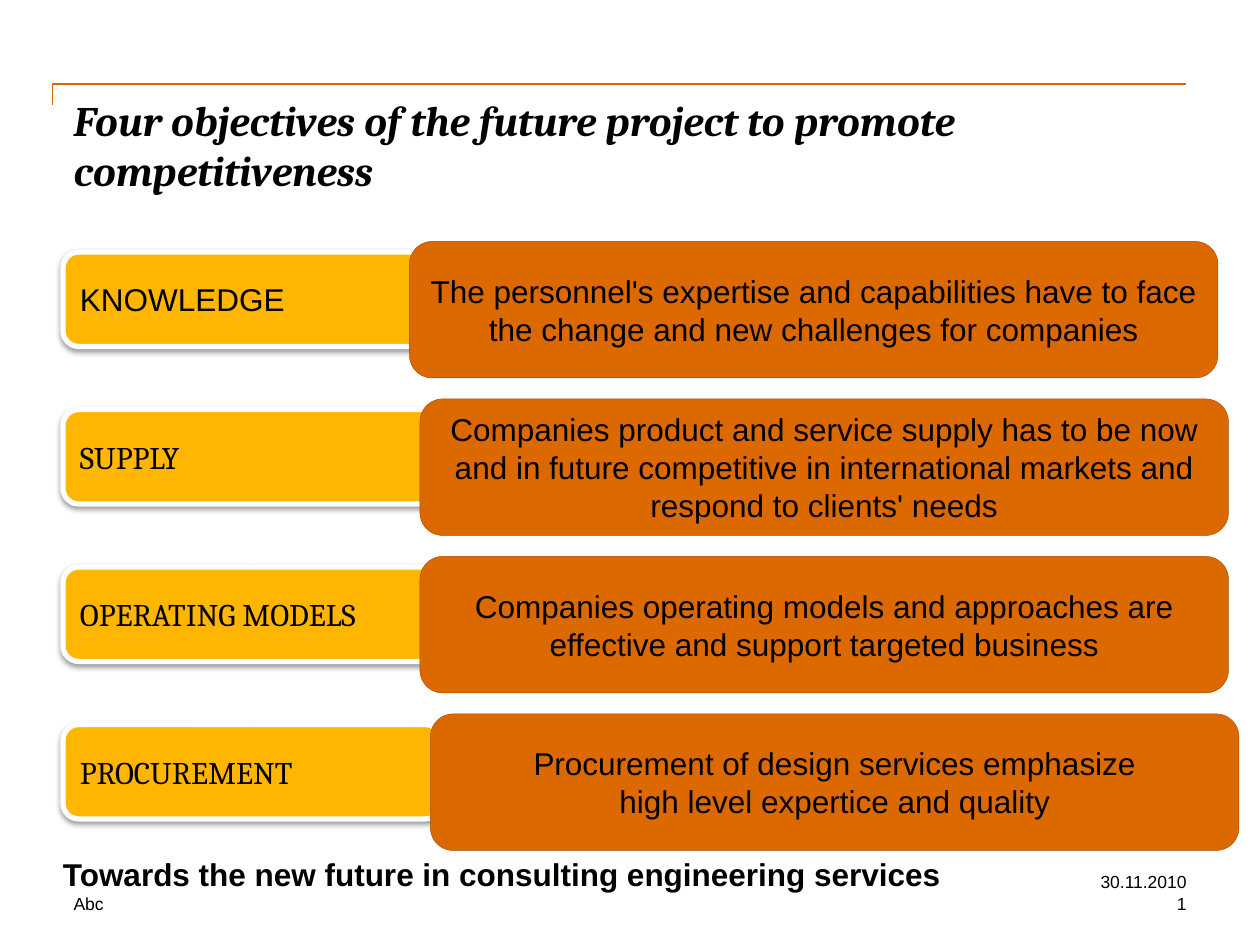
from lxml.etree import SubElement
from pptx import Presentation
from pptx.dml.color import RGBColor
from pptx.enum.shapes import MSO_CONNECTOR, MSO_SHAPE
from pptx.enum.text import MSO_ANCHOR, MSO_AUTO_SIZE, PP_ALIGN
from pptx.oxml.ns import qn
from pptx.util import Pt

PX = 7620
COLORS = {"label": "FFB600", "label_line": "FFFFFF", "goal": "DC6900",
          "goal_line": "A34E00", "rule": "DC6900", "text": "000000"}
BODY = {"name": "Arial", "size": Pt(18)}
SERIF = {"name": "Cambria", "size": Pt(18)}
TITLE = {"name": "Cambria", "size": Pt(24), "bold": True, "italic": True}
TAGLINE = {"name": "Arial", "size": Pt(18), "bold": True}
SMALL = {"name": "Arial", "size": Pt(10)}
ROWS = [
    ("KNOWLEDGE", BODY, 330,
     ["The personnel's expertise and capabilities have to face the change "
      "and new challenges for companies"]),
    ("SUPPLY", SERIF, 340,
     ["Companies product and service supply has to be now and in future "
      "competitive in international markets and respond to clients' needs"]),
    ("OPERATING MODELS", SERIF, 340,
     ["Companies operating models and approaches are effective and support "
      "targeted business"]),
    ("PROCUREMENT", SERIF, 350,
     ["Procurement of design services emphasize",
      "high level expertice and quality"]),
]


def px(*values):
    """Turn px lengths into EMU."""
    return [v * PX for v in values]


def rgb(key):
    """Look up a named colour."""
    return RGBColor.from_string(COLORS[key])


def write(tf, lines, font, align=PP_ALIGN.LEFT, anchor=MSO_ANCHOR.TOP, margin=None):
    """Fill a text frame with formatted paragraphs."""
    frame = {"word_wrap": True, "auto_size": MSO_AUTO_SIZE.NONE, "vertical_anchor": anchor}
    if margin is not None:
        frame.update({f"margin_{side}": margin for side in ("left", "top", "right", "bottom")})
    for name, value in frame.items():
        setattr(tf, name, value)
    for i, line in enumerate(lines):
        p = tf.add_paragraph() if i else tf.paragraphs[0]
        p.alignment = align
        r = p.add_run()
        r.text = line
        for name, value in font.items():
            setattr(r.font, name, value)
        r.font.color.rgb = rgb("text")


def add_text(s, box, text, font, **layout):
    """Add a text box without margins."""
    sp = s.shapes.add_textbox(*px(*box))
    write(sp.text_frame, [text], font, margin=0, **layout)


def add_panel(s, box, color, weight, lines, font, align):
    """Add a rounded panel with text centred vertically."""
    sp = s.shapes.add_shape(MSO_SHAPE.ROUNDED_RECTANGLE, *px(*box))
    sp.shadow.inherit = False
    sp.fill.solid()
    sp.fill.fore_color.rgb = rgb(color)
    sp.line.color.rgb = rgb(f"{color}_line")
    sp.line.width = Pt(weight)
    write(sp.text_frame, lines, font, align, MSO_ANCHOR.MIDDLE)
    return sp


def add_shadow(sp):
    """Give a shape a soft shadow below it."""
    effects = sp._element.spPr.find(qn("a:effectLst"))
    shadow = SubElement(effects, qn("a:outerShdw"), blurRad="40000", dist="20000",
                        dir="5400000", rotWithShape="0")
    color = SubElement(shadow, qn("a:srgbClr"), val=COLORS["text"])
    SubElement(color, qn("a:alpha"), val="38000")


def add_header(s, box):
    """Place the bent rule and the title in the box."""
    x, y, w, h = box
    drop = 20
    mid_x, mid_y = x - 20 + (w + 20) // 2, y
    half = (w + 20) // 2
    c = s.shapes.add_connector(MSO_CONNECTOR.ELBOW, *px(
        mid_x + drop // 2, mid_y + half, mid_x - drop // 2, mid_y - half))
    c.line.color.rgb = rgb("rule")
    c.line.width = Pt(1)
    props = c._element.spPr
    props.find(qn("a:prstGeom")).set("prst", "bentConnector2")
    props.find(qn("a:xfrm")).set("rot", "5400000")
    SubElement(props, qn("a:effectLst"))
    title = s.shapes.title
    title.left, title.top, title.width, title.height = px(x, y, w, h)
    write(title.text_frame, ["Four objectives of the future project to promote competitiveness"],
          TITLE, margin=0)


def add_objectives(s, box):
    """Place the labels, then the goals that overlap them, at an equal pitch."""
    x, y, w, h = box
    goal_h = 130
    pitch = (h - goal_h) // (len(ROWS) - 1)
    for i, (label, font, _, _) in enumerate(ROWS):
        add_shadow(add_panel(s, (x, y + 10 + i * pitch, 360, 90), "label", 3,
                             [label], font, PP_ALIGN.LEFT))
    for i, (_, _, indent, lines) in enumerate(ROWS):
        add_panel(s, (x + indent, y + i * pitch, w - 350, goal_h), "goal", 0.25,
                  lines, BODY, PP_ALIGN.CENTER)


def add_footer(s, box):
    """Place the tagline, firm name, date and slide number."""
    x, y, w, h = box
    right = x + w - 200
    add_text(s, (x, y, 1010, 30), "Towards the new future in consulting engineering services",
             TAGLINE, anchor=MSO_ANCHOR.BOTTOM)
    add_text(s, (x + 10, y + h - 20, 340, 20), "Abc", SMALL)
    add_text(s, (right, y + h - 40, 200, 20), "30.11.2010", SMALL, align=PP_ALIGN.RIGHT)
    add_text(s, (right, y + h - 20, 200, 20), "1", SMALL, align=PP_ALIGN.RIGHT)


def main():
    """Build the slide and save it."""
    prs = Presentation()
    prs.slide_width, prs.slide_height = px(1200, 900)
    s = prs.slides.add_slide(prs.slide_layouts[5])
    add_header(s, (70, 90, 1060, 120))
    add_objectives(s, (60, 230, 1120, 580))
    add_footer(s, (60, 820, 1070, 50))
    prs.save("out.pptx")


if __name__ == "__main__":
    main()
